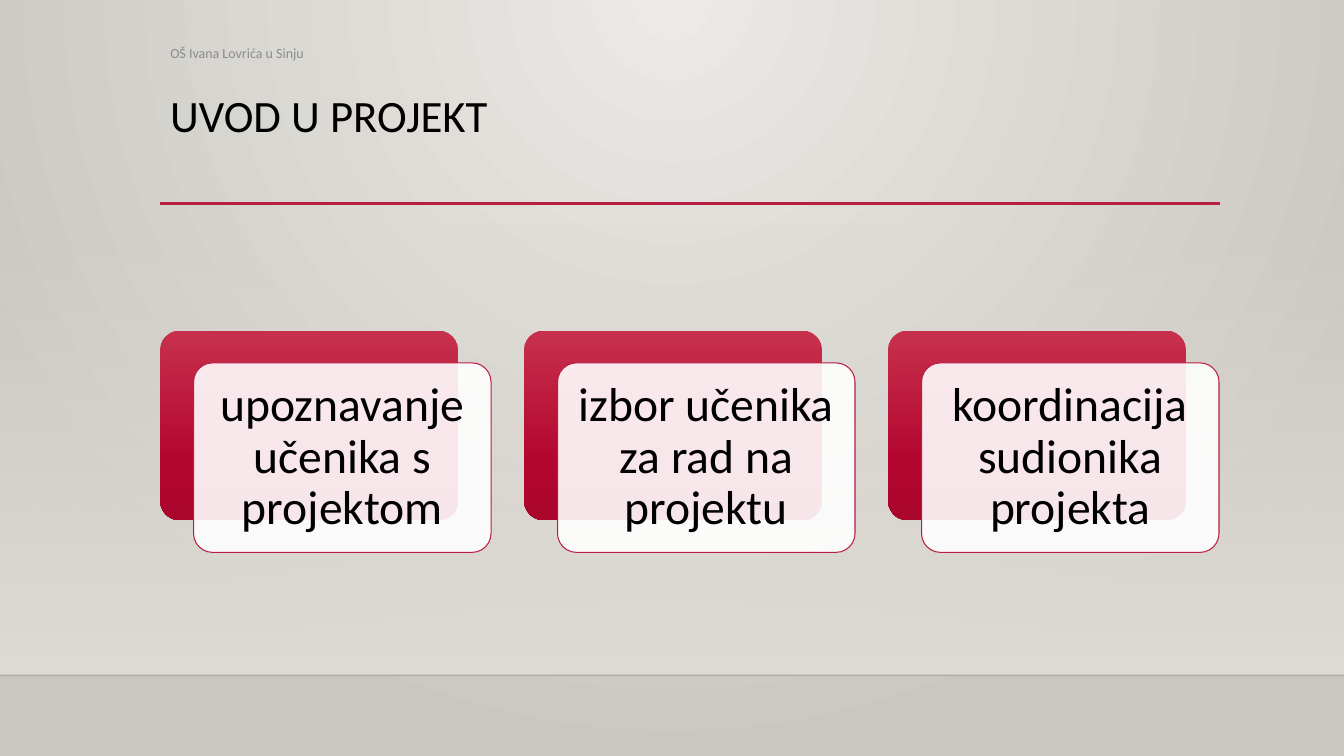
from dataclasses import dataclass

from lxml.etree import SubElement
from pptx import Presentation
from pptx.dml.color import RGBColor
from pptx.enum.shapes import MSO_CONNECTOR, MSO_SHAPE
from pptx.enum.text import MSO_ANCHOR, PP_ALIGN
from pptx.oxml.ns import qn
from pptx.util import Inches, Pt

FONT = "Calibri"
BLACK = RGBColor(0x00, 0x00, 0x00)
WHITE = RGBColor(0xFF, 0xFF, 0xFF)
GRAY = RGBColor(0x8C, 0x8C, 0x8C)
CRIMSON = RGBColor(0xB7, 0x1E, 0x42)
FLOOR_EDGE = RGBColor(0x00, 0x00, 0x01)
SAND = RGBColor(0xDF, 0xDB, 0xD5)
SAND_LIGHT = RGBColor(0xEC, 0xEA, 0xE7)
SAND_DARK = RGBColor(0xCA, 0xC7, 0xC1)
RED_TOP = RGBColor(0xC7, 0x30, 0x4C)
RED_MIDDLE = RGBColor(0xB3, 0x06, 0x2F)
RED_BOTTOM = RGBColor(0xAA, 0x06, 0x2C)

LEFT = 1.59
RIGHT = 12.1
WIDTH = 13.33
FLOOR_TOP = 6.7
CARD_TOP = 3.28
CARD_W, CARD_H = 2.95, 1.88
CARD_PITCH = 3.61
CARD_SHIFT_X, CARD_SHIFT_Y = 0.33, 0.32
CARD_INSET = Inches(0.13)
CARDS = [
    "upoznavanje učenika s projektom",
    "izbor učenika za rad na projektu",
    "koordinacija sudionika projekta",
]


@dataclass
class Stop:
    position: int
    color: RGBColor
    opacity: int = 100


@dataclass
class Label:
    text: str
    top: float
    width: float
    height: float
    size: int
    color: RGBColor
    anchor: MSO_ANCHOR
    spacing: float = 1.0


@dataclass
class Rule:
    x1: float
    x2: float
    y: float
    color: RGBColor
    weight: float
    opacity: int = 100


LABELS = [
    Label("UVOD U PROJEKT", 0.88, 10.5, 1.15, 32, BLACK, MSO_ANCHOR.TOP, 0.9),
    Label("OŠ Ivana Lovrića u Sinju", 0.36, 6.49, 0.34, 10, GRAY, MSO_ANCHOR.MIDDLE),
]
RULES = [
    Rule(0, WIDTH, FLOOR_TOP, FLOOR_EDGE, 1, 20),
    Rule(LEFT, RIGHT, 2.02, CRIMSON, 2.5),
]


def set_opacity(parent, percent: int) -> None:
    for color in parent.iter(qn("a:srgbClr")):
        SubElement(color, qn("a:alpha"), val=str(percent * 1000))


def set_gradient(fill, parent, stops: list[Stop], radial: bool = False) -> None:
    """Fill with the stops from top to bottom, or in circles around the top centre."""
    fill.gradient()
    grad = next(parent.iter(qn("a:gradFill")))
    grad.clear()
    stop_list = SubElement(grad, qn("a:gsLst"))
    for stop in stops:
        gs = SubElement(stop_list, qn("a:gs"), pos=str(stop.position * 1000))
        SubElement(gs, qn("a:srgbClr"), val=str(stop.color))
        if stop.opacity < 100:
            set_opacity(gs, stop.opacity)
    if radial:
        path = SubElement(grad, qn("a:path"), {"path": "circle"})
        SubElement(path, qn("a:fillToRect"), l="43000", t="0", r="43000", b="100000")
    else:
        SubElement(grad, qn("a:lin"), ang="5400000", scaled="0")


def add_box(s, kind: MSO_SHAPE, x: float, y: float, w: float, h: float):
    box = s.shapes.add_shape(kind, Inches(x), Inches(y), Inches(w), Inches(h))
    box.shadow.inherit = False
    box.line.fill.background()
    return box


def add_rule(s, rule: Rule) -> None:
    y = Inches(rule.y)
    line = s.shapes.add_connector(
        MSO_CONNECTOR.STRAIGHT, Inches(rule.x1), y, Inches(rule.x2), y)
    line.line.color.rgb = rule.color
    line.line.width = Pt(rule.weight)
    sp_pr = line.element.spPr
    if rule.opacity < 100:
        set_opacity(sp_pr, rule.opacity)
    SubElement(sp_pr, qn("a:effectLst"))


def write_text(tf, text: str, size: int, color: RGBColor, spacing: float,
               anchor: MSO_ANCHOR, align: PP_ALIGN) -> None:
    tf.word_wrap = True
    tf.vertical_anchor = anchor
    p = tf.paragraphs[0]
    p.text = text
    p.alignment = align
    p.line_spacing = spacing
    p.font.name = FONT
    p.font.size = Pt(size)
    p.font.color.rgb = color


def add_label(s, label: Label) -> None:
    box = s.shapes.add_textbox(Inches(LEFT), Inches(label.top),
                               Inches(label.width), Inches(label.height))
    write_text(box.text_frame, label.text, label.size, label.color,
               label.spacing, label.anchor, PP_ALIGN.LEFT)


def add_card(s, x: float, text: str) -> None:
    """Draw a red plate with a translucent white card shifted over it."""
    plate = add_box(s, MSO_SHAPE.ROUNDED_RECTANGLE, x, CARD_TOP, CARD_W, CARD_H)
    set_gradient(plate.fill, plate.element.spPr,
                 [Stop(0, RED_TOP), Stop(69, RED_MIDDLE), Stop(100, RED_BOTTOM)])
    card = add_box(s, MSO_SHAPE.ROUNDED_RECTANGLE, x + CARD_SHIFT_X,
                   CARD_TOP + CARD_SHIFT_Y, CARD_W, CARD_H)
    plate.adjustments[0] = card.adjustments[0] = 0.1
    card.fill.solid()
    card.fill.fore_color.rgb = WHITE
    set_opacity(card.element.spPr, 90)
    card.line.color.rgb = CRIMSON
    card.line.width = Pt(0.75)
    tf = card.text_frame
    tf.margin_left = tf.margin_right = tf.margin_top = tf.margin_bottom = CARD_INSET
    write_text(tf, text, 34, BLACK, 0.9, MSO_ANCHOR.MIDDLE, PP_ALIGN.CENTER)


def main() -> None:
    prs = Presentation()
    prs.slide_width, prs.slide_height = Inches(WIDTH), Inches(7.5)
    s = prs.slides.add_slide(prs.slide_layouts[6])
    set_gradient(s.background.fill, s.element,
                 [Stop(0, SAND_LIGHT), Stop(100, SAND_DARK)], radial=True)
    wall = add_box(s, MSO_SHAPE.RECTANGLE, 0, 2.21, WIDTH, FLOOR_TOP - 2.21)
    set_gradient(wall.fill, wall.element.spPr, [Stop(0, SAND, 0), Stop(100, SAND)])
    for rule in RULES:
        add_rule(s, rule)
    for label in LABELS:
        add_label(s, label)
    for i, text in enumerate(CARDS):
        add_card(s, LEFT + i * CARD_PITCH, text)
    prs.save("out.pptx")


if __name__ == "__main__":
    main()
